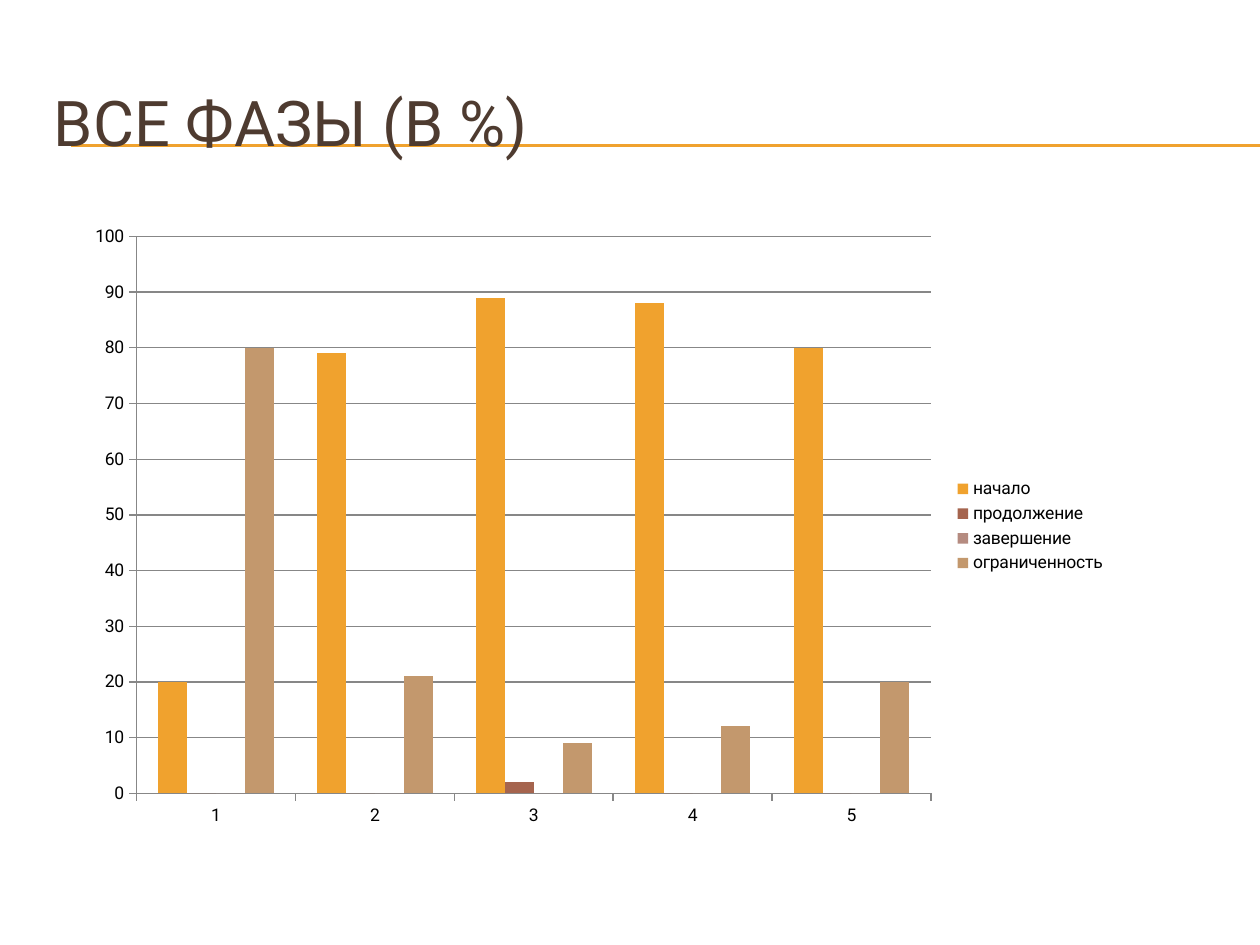
import pptx
import pptx.util
import pptx.chart.data
import pptx.dml.color
import pptx.enum.chart
import pptx.enum.shapes
import pptx.enum.text
import pptx.oxml
import pptx.oxml.ns

Inches = pptx.util.Inches
Pt = pptx.util.Pt


class Deck:
    """Holds the style and the current slide, and adds elements to it."""

    FONT = "Roboto"
    COLORS = {
        "title": "4E3B30",
        "text": "000000",
        "rule": "F0A22E",
        "grid": "878787",
        "начало": "F0A22E",
        "продолжение": "A5644E",
        "завершение": "B58B80",
        "ограниченность": "C3986D",
    }

    def __init__(self, width, height):
        self.prs = pptx.Presentation()
        self.prs.slide_width = Inches(width)
        self.prs.slide_height = Inches(height)
        self.s = self.prs.slides.add_slide(self.prs.slide_layouts[6])

    def color(self, name):
        return pptx.dml.color.RGBColor.from_string(self.COLORS[name])

    def style_font(self, font, size, color):
        font.name = self.FONT
        font.size = Pt(size)
        font.color.rgb = self.color(color)

    def style_line(self, line, color):
        line.color.rgb = self.color(color)
        line.width = Pt(0.75)

    def rule(self, left, right, y):
        line = self.s.shapes.add_connector(
            pptx.enum.shapes.MSO_CONNECTOR.STRAIGHT,
            Inches(left), Inches(y), Inches(right), Inches(y))
        self.style_line(line.line, "rule")
        sp_pr = line._element.spPr
        sp_pr.append(pptx.oxml.parse_xml(
            f"<a:effectLst {pptx.oxml.ns.nsdecls('a')}/>"))

    def title(self, text, left, top, width, height):
        sp = self.s.shapes.add_textbox(
            Inches(left), Inches(top), Inches(width), Inches(height))
        tf = sp.text_frame
        tf.word_wrap = True
        tf.vertical_anchor = pptx.enum.text.MSO_ANCHOR.MIDDLE
        p = tf.paragraphs[0]
        p.text = text
        self.style_font(p.font, 36, "title")

    def column_chart(self, cats, series, left, top, width, height):
        data = pptx.chart.data.CategoryChartData()
        data.categories = cats
        for name, values in series.items():
            data.add_series(name, values)
        chart = self.s.shapes.add_chart(
            pptx.enum.chart.XL_CHART_TYPE.COLUMN_CLUSTERED,
            Inches(left), Inches(top), Inches(width), Inches(height),
            data).chart
        self.style_font(chart.font, 10, "text")
        chart.has_title = False
        chart.has_legend = True
        chart.legend.position = pptx.enum.chart.XL_LEGEND_POSITION.RIGHT
        chart.legend.include_in_layout = False
        plot = chart.plots[0]
        plot.gap_width = 150
        plot.overlap = 0
        plot.vary_by_categories = False
        for ser in plot.series:
            ser.format.fill.solid()
            ser.format.fill.fore_color.rgb = self.color(ser.name)
            ser.invert_if_negative = False
        for axis in (chart.category_axis, chart.value_axis):
            axis.major_tick_mark = pptx.enum.chart.XL_TICK_MARK.OUTSIDE
            axis.minor_tick_mark = pptx.enum.chart.XL_TICK_MARK.NONE
            self.style_line(axis.format.line, "grid")
        axis = chart.value_axis
        axis.minimum_scale, axis.maximum_scale, axis.major_unit = 0, 100, 10
        axis.has_major_gridlines = True
        self.style_line(axis.major_gridlines.format.line, "grid")


def main():
    deck = Deck(10, 7.5)
    for y in (1.15, 1.16):
        deck.rule(0.56, 10, y)
    deck.title("ВСЕ ФАЗЫ (В %)", 0.33, 0.5, 9.5, 0.92)
    phases = {
        "начало": (20, 79, 89, 88, 80),
        "продолжение": (0, 0, 2, 0, 0),
        "завершение": (0, 0, 0, 0, 0),
        "ограниченность": (80, 21, 9, 12, 20),
    }
    deck.column_chart(["1", "2", "3", "4", "5"], phases, 0.59, 1.7, 8.29, 4.95)
    deck.prs.save("out.pptx")


if __name__ == "__main__":
    main()
